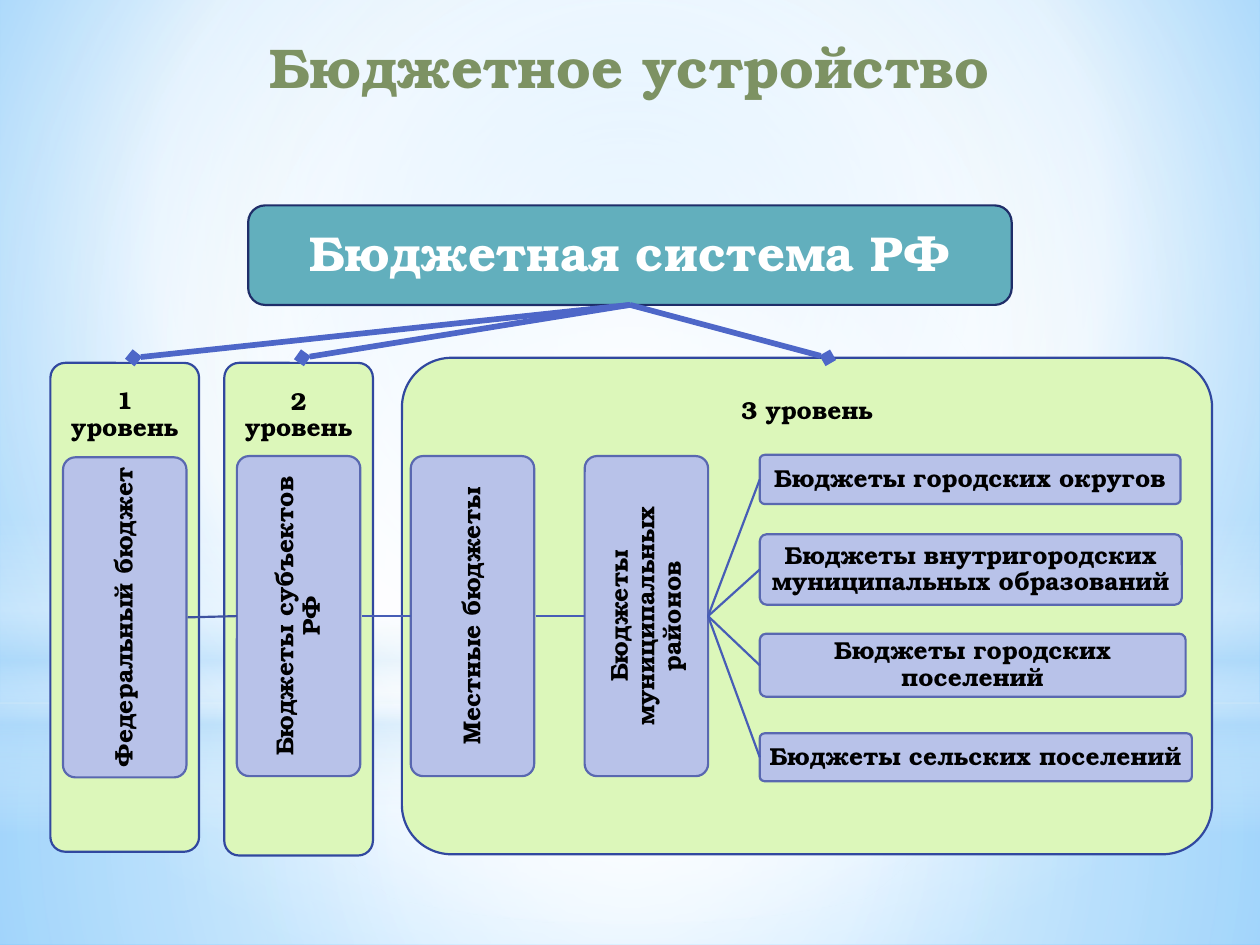
from lxml.etree import SubElement
from pptx import Presentation
from pptx.dml.color import RGBColor
from pptx.enum.shapes import MSO_CONNECTOR, MSO_SHAPE
from pptx.enum.text import MSO_ANCHOR, PP_ALIGN
from pptx.oxml.ns import qn
from pptx.util import Inches, Pt

FONT = "TeX Gyre Bonum"
HEX = {
    "title": "7D9263", "root": "62AFBD", "rim": "1F2E69", "arrow": "4E67C8",
    "panel": "DCF7BA", "edge": "31489F", "leaf": "B8C2E9", "side": "5968B0",
    "link": "475DB6", "first": "3E52A0", "black": "000000", "white": "FFFFFF",
}
COLOR = {name: RGBColor.from_string(code) for name, code in HEX.items()}


def blend(host, stops, rect=None):
    """Swap the solid fill of host for a gradient: round if rect is given, else downward."""
    old = host.find(qn("a:solidFill"))
    grad = host.makeelement(qn("a:gradFill"), {"rotWithShape": "1"})
    host.replace(old, grad)
    row = SubElement(grad, qn("a:gsLst"))
    for pos, code, alpha in stops:
        stop = SubElement(row, qn("a:gs"), pos=str(pos * 1000))
        tint = SubElement(stop, qn("a:srgbClr"), val=code)
        if alpha < 100:
            SubElement(tint, qn("a:alpha"), val=str(alpha * 1000))
    if rect:
        way = SubElement(grad, qn("a:path"), path="circle")
        sides = {side: str(n * 1000) for side, n in zip("ltrb", rect)}
        SubElement(way, qn("a:fillToRect"), sides)
    else:
        SubElement(grad, qn("a:lin"), ang="5400000", scaled="0")


def write(shape, text, size=14, color="black", inset=0.1, space=0.9):
    """Put one centred bold run into a shape."""
    frame = shape.text_frame
    frame.word_wrap = True
    frame.vertical_anchor = MSO_ANCHOR.MIDDLE
    frame.margin_left = frame.margin_right = Inches(inset)
    frame.margin_top = frame.margin_bottom = Inches(inset)
    para = frame.paragraphs[0]
    para.alignment = PP_ALIGN.CENTER
    para.line_spacing = space
    run = para.add_run()
    run.text = text
    run.font.name, run.font.size, run.font.bold = FONT, Pt(size), True
    run.font.color.rgb = COLOR[color]


deck = Presentation()
deck.slide_width, deck.slide_height = Inches(10), Inches(7.5)
slide = deck.slides.add_slide(deck.slide_layouts[5])
shapes = slide.shapes

# Background
slide.background.fill.solid()
blend(slide.element.find(".//" + qn("p:bgPr")),
      [(0, "9ED5FF", 100), (60, "FFFFFF", 100), (100, "5BB9FF", 100)], (20, 10, 20, 60))

# Soft light over the background
MID = (50, 50, 50, 50)
glows = [
    (MSO_SHAPE.RECTANGLE, 5.58, 1.92, MID,
     [(0, "FFFFFF", 91), (37, "FFFFFF", 76), (100, "B4DCFA", 79)]),
    (MSO_SHAPE.RECTANGLE, 0, 5.58, MID,
     [(0, "FFFFFF", 89), (48, "FFFFFF", 62), (100, "B4DCFA", 79)]),
    (MSO_SHAPE.RECTANGLE, 4.12, 2.5, None,
     [(0, "FFFFFF", 0), (29, "FFFFFF", 30), (45, "B4DCFA", 40),
      (55, "FFFFFF", 26), (65, "B4DCFA", 60), (100, "FFFFFF", 0)]),
    (MSO_SHAPE.OVAL, 1.75, 5.58, MID, [(0, "FFFFFF", 100), (56, "FFFFFF", 0)]),
]
for kind, top, high, rect, stops in glows:
    glow = shapes.add_shape(kind, 0, Inches(top), Inches(10), Inches(high))
    glow.shadow.inherit = False
    glow.line.fill.background()
    glow.fill.solid()
    blend(glow.element.spPr, stops, rect)

# Title, brought in front of the light
title = shapes.title
shapes.element.append(title.element)
title.left, title.top = Inches(0.5), Inches(0.21)
title.width, title.height = Inches(9), Inches(0.98)
write(title, "Бюджетное устройство", 32, "title", 0.05, 1.0)
title.text_frame.vertical_anchor = MSO_ANCHOR.TOP

# Every rounded box: place, colours, corner, text, size, inset, upright
panels = [
    (3.19, 2.84, 6.43, 3.94, 0.86, "3 уровень"),
    (1.78, 2.88, 1.18, 3.91, 0.84, "2 уровень"),
    (0.4, 2.88, 1.18, 3.88, 0.83, "1 уровень"),
]
columns = [
    (0.5, 3.63, "Федеральный бюджет"),
    (1.88, 3.62, "Бюджеты субъектов РФ"),
    (3.26, 3.62, "Местные бюджеты"),
    (4.64, 3.62, "Бюджеты муниципальных районов"),
]
rows = [
    (3.61, 3.34, 0.39, "Бюджеты городских округов"),
    (4.24, 3.35, 0.56, "Бюджеты внутригородских муниципальных образований"),
    (5.03, 3.38, 0.5, "Бюджеты городских поселений"),
    (5.82, 3.43, 0.38, "Бюджеты сельских поселений"),
]
boxes = [(x, y, w, h, "panel", "edge", 0.1, "", 14, 0, False)
         for x, y, w, h, band, text in panels]
boxes += [(x, y, 0.98, 2.54, "leaf", "side", 0.1, text, 14, 0.04, True)
          for x, y, text in columns]
boxes += [(6.03, y, w, h, "leaf", "side", 0.1, text, 14, 0.02, False)
          for y, w, h, text in rows]
boxes.append((1.97, 1.63, 6.06, 0.79, "root", "rim", 0.17,
              "Бюджетная система РФ", 28, 0.1, False))
for x, y, w, h, fill, line, bend, text, size, inset, up in boxes:
    box = shapes.add_shape(MSO_SHAPE.ROUNDED_RECTANGLE,
                           Inches(x), Inches(y), Inches(w), Inches(h))
    box.shadow.inherit = False
    box.adjustments[0] = bend
    box.fill.solid()
    box.fill.fore_color.rgb = COLOR[fill]
    box.line.color.rgb = COLOR[line]
    box.line.width = Pt(1.25)
    if text:
        write(box, text, size, "white" if fill == "root" else "black", inset)
    if up:
        box.text_frame._txBody.bodyPr.set("vert", "vert270")

# Level names at the top of the panels
for x, y, w, h, band, text in panels:
    label = shapes.add_textbox(Inches(x), Inches(y), Inches(w), Inches(band))
    write(label, text, inset=0.11)

# Links between boxes, then the arrows from the root
MIDDLE = 4.89
lines = [(x + 0.99, MIDDLE + 0.01 * (x == 0.5), x + 1.38, MIDDLE,
          "first" if x == 0.5 else "link", 1.25, False) for x, y, text in columns[:3]]
lines += [(5.62, MIDDLE, 6.03, y + h / 2, "link", 1.25, False) for y, w, h, text in rows]
lines += [(5, 2.42, x, 2.84, "arrow", 3.25, True) for x in (6.57, 1.06, 2.4)]
for x1, y1, x2, y2, color, width, tip in lines:
    link = shapes.add_connector(MSO_CONNECTOR.STRAIGHT,
                                Inches(x1), Inches(y1), Inches(x2), Inches(y2))
    link.line.color.rgb = COLOR[color]
    link.line.width = Pt(width)
    if tip:
        SubElement(link.line._get_or_add_ln(), qn("a:tailEnd"), type="diamond")
    SubElement(link.element.spPr, qn("a:effectLst"))

deck.save("out.pptx")
